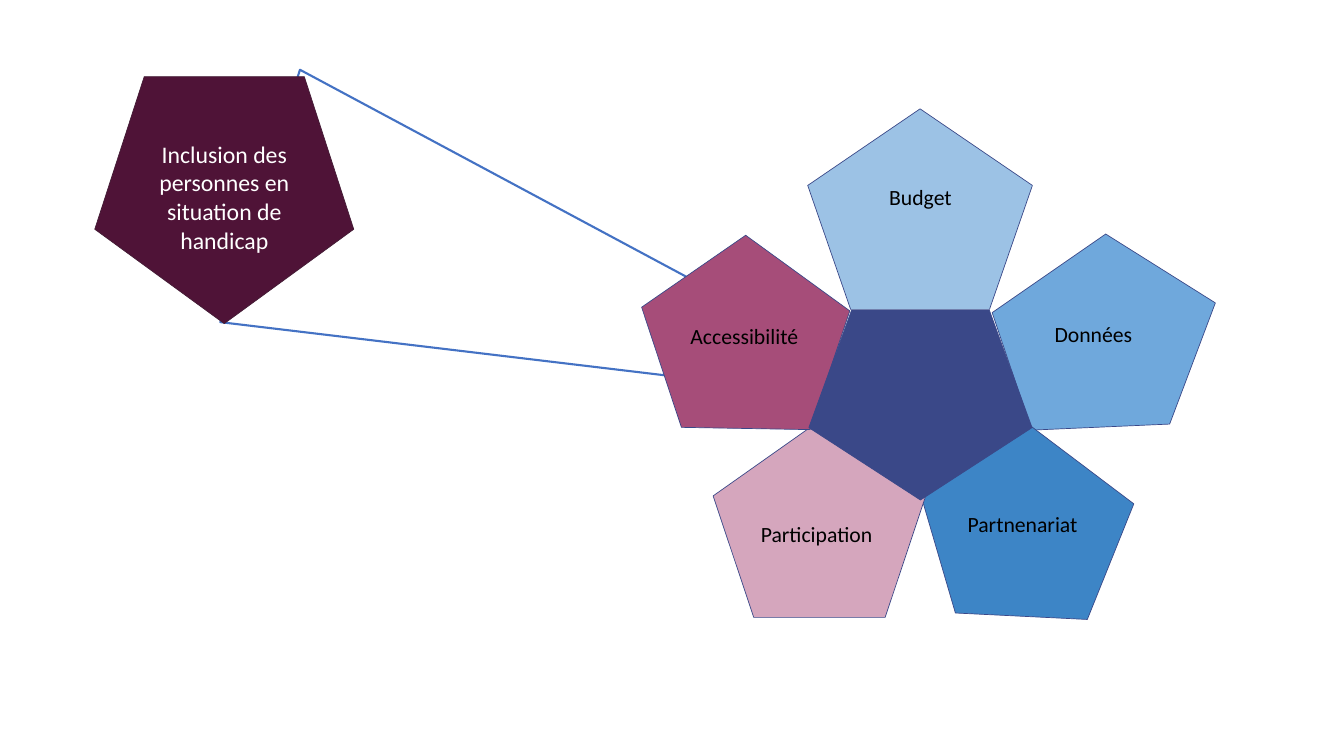
from pptx import Presentation
from pptx.dml.color import RGBColor
from pptx.enum.shapes import MSO_SHAPE
from pptx.enum.text import MSO_AUTO_SIZE, PP_ALIGN
from pptx.util import Inches, Pt

# Grid of 100 columns by 100 rows
WIDTH, HEIGHT = Inches(26.67), Inches(15)
COLUMN, ROW = WIDTH / 100, HEIGHT / 100

WHITE = RGBColor(0xFF, 0xFF, 0xFF)
BLACK = RGBColor(0x00, 0x00, 0x00)
BEAM_BLUE = RGBColor(0x44, 0x72, 0xC4)
NAVY = RGBColor(0x3A, 0x48, 0x88)
PALE_BLUE = RGBColor(0x9C, 0xC2, 0xE5)
SKY_BLUE = RGBColor(0x6F, 0xA8, 0xDC)
STRONG_BLUE = RGBColor(0x3D, 0x85, 0xC6)
PINK = RGBColor(0xD5, 0xA6, 0xBD)
RASPBERRY = RGBColor(0xA6, 0x4D, 0x79)
PLUM = RGBColor(0x4F, 0x13, 0x37)
DARK_PLUM = RGBColor(0x43, 0x1C, 0x35)

LABEL_ROWS = 4.13

# Petals: place (column, row, columns, rows), rotation, colour,
# label, label place (column, row, columns), label alignment
PETALS = [
    ((75.4, 30.4, 14.92, 28.4), 71.4, SKY_BLUE,
     "Données", (75.22, 42.07, 12.26), PP_ALIGN.CENTER),
    ((68.39, 56.33, 15.9, 25.2), 2.8, STRONG_BLUE,
     "Partnenariat", (68.88, 67.27, 14.4), PP_ALIGN.CENTER),
    ((53.06, 55.67, 15.82, 26), 0, PINK,
     "Participation", (56.24, 68.6, 9.86), PP_ALIGN.LEFT),
    ((60.1, 14.4, 16.72, 26.53), 0, PALE_BLUE,
     "Budget", (61.83, 24, 13.31), PP_ALIGN.CENTER),
    ((47.21, 31.67, 15.07, 26.27), 288.5, RASPBERRY,
     "Accessibilité", (49.72, 42.33, 11.32), PP_ALIGN.CENTER),
]


def on_grid(place):
    column, row, columns, rows = place
    return [round(n) for n in
            (column * COLUMN, row * ROW, columns * COLUMN, rows * ROW)]


def add_outline(slide, preset, place, rotation, fill, line, line_width=1):
    outline = slide.shapes.add_shape(preset, *on_grid(place))
    outline.rotation = rotation
    outline.shadow.inherit = False
    outline.fill.solid()
    outline.fill.fore_color.rgb = fill
    outline.line.color.rgb = line
    outline.line.width = Pt(line_width)
    return outline


def add_pentagon(slide, place, rotation, fill, line=NAVY):
    add_outline(slide, MSO_SHAPE.REGULAR_PENTAGON, place, rotation, fill, line)


def add_label(slide, text, place, size=31, colour=BLACK,
              alignment=PP_ALIGN.CENTER):
    frame = slide.shapes.add_textbox(*on_grid(place)).text_frame
    frame.word_wrap = True
    frame.auto_size = MSO_AUTO_SIZE.SHAPE_TO_FIT_TEXT
    paragraph = frame.paragraphs[0]
    paragraph.text = text
    paragraph.alignment = alignment
    paragraph.font.name = "Calibri"
    paragraph.font.size = Pt(size)
    paragraph.font.color.rgb = colour


def main():
    deck = Presentation()
    deck.slide_width, deck.slide_height = WIDTH, HEIGHT
    slide = deck.slides.add_slide(deck.slide_layouts[6])

    # Beam that enlarges the accessibility petal
    beam = add_outline(slide, MSO_SHAPE.TRAPEZOID, (28.68, 0.93, 19.69, 71.47),
                       107.5, WHITE, BEAM_BLUE, line_width=3)
    beam.adjustments[0] = 0.385

    # Flower: petals, core, then labels
    for place, rotation, colour, *_ in PETALS:
        add_pentagon(slide, place, rotation, colour)
    add_pentagon(slide, (60.18, 41.07, 16.61, 25.07), 180, NAVY)
    for *_, text, label_place, alignment in PETALS:
        add_label(slide, text, (*label_place, LABEL_ROWS), alignment=alignment)

    # Detail at the wide end of the beam
    add_pentagon(slide, (7.05, 10.13, 19.27, 32.67), 180, PLUM, DARK_PLUM)
    add_label(slide, "Inclusion des personnes en situation de handicap",
              (9.94, 18.13, 13.5, 15.93), size=34, colour=WHITE)

    deck.save("out.pptx")


if __name__ == "__main__":
    main()
